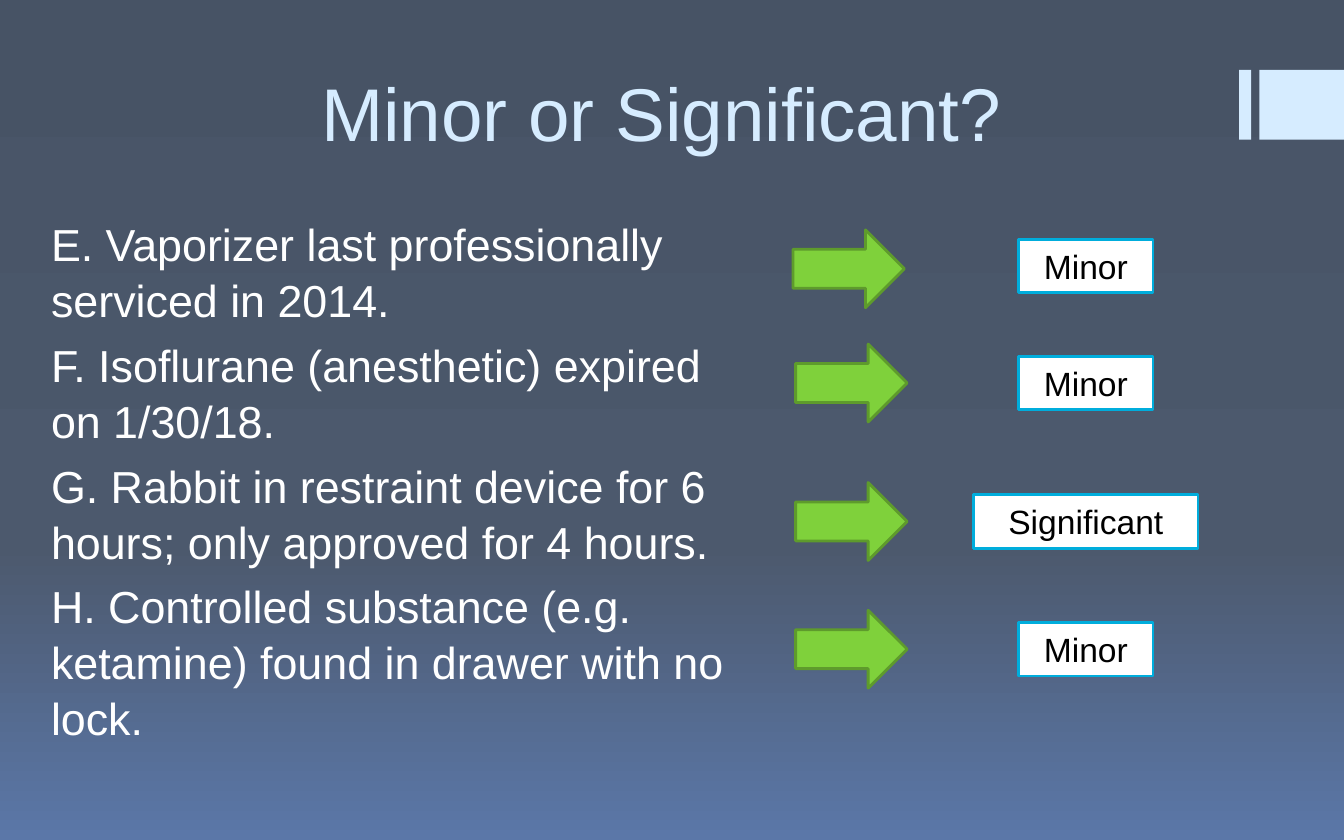
from copy import deepcopy
from dataclasses import dataclass

from pptx import Presentation
from pptx.dml.color import RGBColor
from pptx.enum.shapes import MSO_SHAPE as Preset
from pptx.enum.text import MSO_ANCHOR as Anchor, PP_ALIGN as Align
from pptx.oxml.ns import qn
from pptx.util import Inches, Pt


@dataclass(frozen=True)
class Theme:
    font: str = "Arial"
    pale: str = "D6ECFF"
    white: str = "FFFFFF"
    black: str = "000000"
    answer_line: str = "00ADDC"
    arrow: str = "7FD13B"
    arrow_line: str = "5E9B2C"
    background: tuple = ((0, "475365"), (0.65, "4C596D"), (1, "5B77A8"))
    title_size: int = 40
    body_size: int = 24
    answer_size: int = 18
    line_width: float = 1.5


theme = Theme()


def add_box(preset, left, top, width, height, fill, line=None):
    shape = slide.shapes.add_shape(
        preset, Inches(left), Inches(top), Inches(width), Inches(height))
    shape.shadow.inherit = False
    shape.fill.solid()
    shape.fill.fore_color.rgb = RGBColor.from_string(fill)
    if line:
        shape.line.color.rgb = RGBColor.from_string(line)
        shape.line.width = Pt(theme.line_width)
    else:
        shape.line.fill.background()
    return shape


def write(text_frame, text, size, color, align):
    text_frame.word_wrap = True
    text_frame.text = text
    for paragraph in text_frame.paragraphs:
        paragraph.alignment = align
        for run in paragraph.runs:
            run.font.name = theme.font
            run.font.size = Pt(size)
            run.font.color.rgb = RGBColor.from_string(color)


presentation = Presentation()
presentation.slide_width = Inches(10)
presentation.slide_height = Inches(6.25)
slide = presentation.slides.add_slide(presentation.slide_layouts[6])

# Background: three-stop gradient from top to bottom
background = slide.background.fill
background.gradient()
background.gradient_angle = 270
stop_list = slide.element.find(".//" + qn("a:gsLst"))
stop_list.insert(1, deepcopy(stop_list[0]))
for stop, (position, color) in zip(background.gradient_stops, theme.background):
    stop.position = position
    stop.color.rgb = RGBColor.from_string(color)

# Bars at the right edge
for left, width in ((9.22, 0.09), (9.37, 0.63)):
    add_box(Preset.RECTANGLE, left, 0.52, width, 0.52, theme.pale)

# Title
title = slide.shapes.add_textbox(Inches(0.92), Inches(0.38), Inches(8), Inches(0.83))
title.text_frame.vertical_anchor = Anchor.BOTTOM
write(title.text_frame, "Minor or Significant?", theme.title_size, theme.pale, Align.CENTER)

# Cases: text, answer, answer width, answer top, arrow left, arrow top
cases = (
    ("E. Vaporizer last professionally serviced in 2014.",
     "Minor", 1, 1.78, 5.9, 1.71),
    ("F. Isoflurane (anesthetic) expired on 1/30/18.",
     "Minor", 1, 2.65, 5.92, 2.56),
    ("G. Rabbit in restraint device for 6 hours; only approved for 4 hours.",
     "Significant", 1.67, 3.68, 5.92, 3.59),
    ("H. Controlled substance (e.g. ketamine) found in drawer with no lock.",
     "Minor", 1, 4.63, 5.92, 4.54),
)

# Case list
body = slide.shapes.add_textbox(Inches(0.25), Inches(1.55), Inches(5.5), Inches(3.25))
body.text_frame.margin_left = Inches(0.13)
write(body.text_frame, "\n".join(case[0] for case in cases),
      theme.body_size, theme.white, Align.LEFT)
for paragraph in body.text_frame.paragraphs:
    paragraph.space_before = Pt(theme.body_size * 0.2)
    paragraph.line_spacing = 1.04

# Arrows and answers, all answers centred on one axis
answer_center = 8.08
for _, answer, width, answer_top, arrow_left, arrow_top in cases:
    add_box(Preset.RIGHT_ARROW, arrow_left, arrow_top, 0.83, 0.58,
            theme.arrow, theme.arrow_line)
    answer_box = add_box(Preset.RECTANGLE, answer_center - width / 2, answer_top,
                         width, 0.4, theme.white, theme.answer_line)
    write(answer_box.text_frame, answer, theme.answer_size, theme.black, Align.CENTER)

presentation.save("out.pptx")
